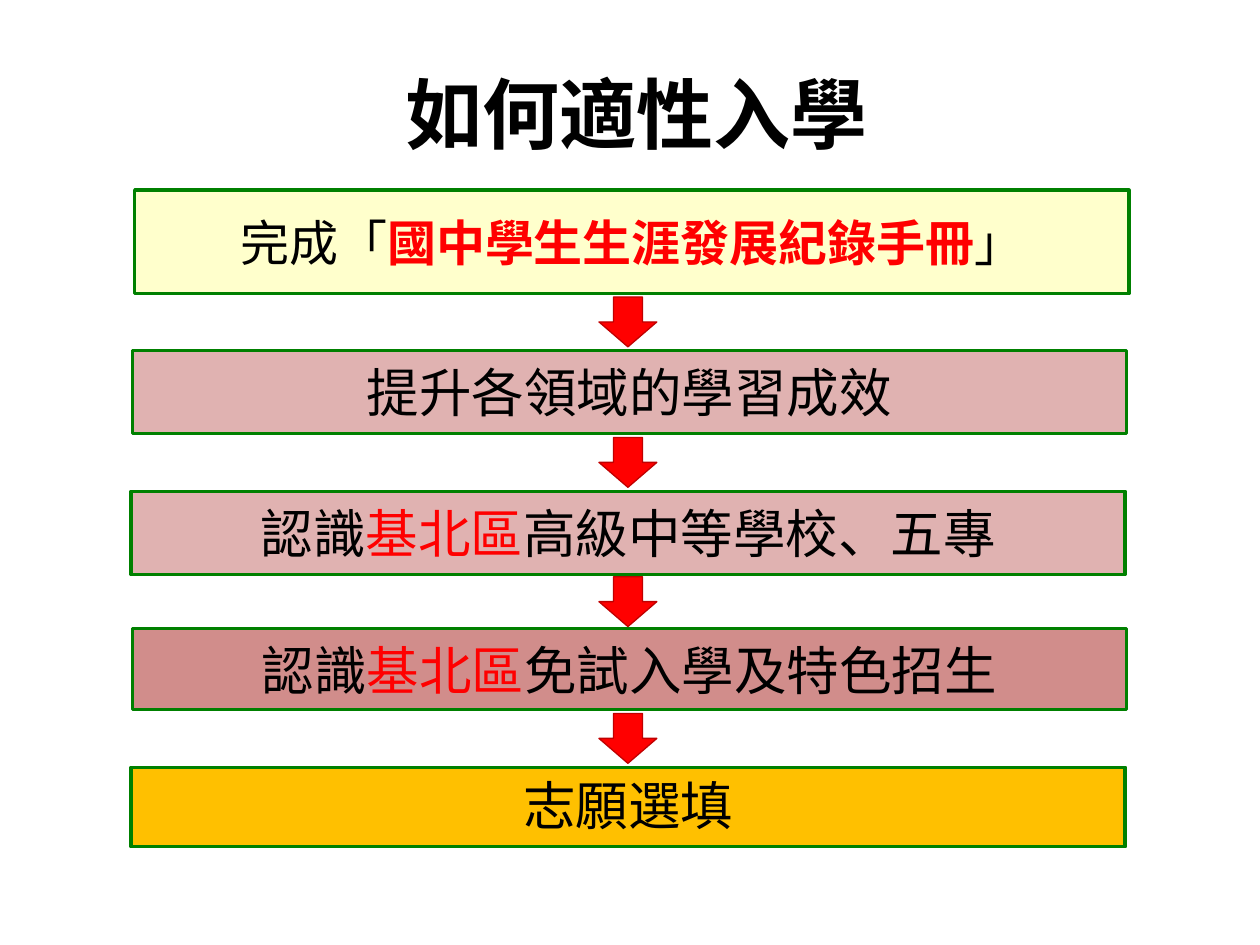
from pptx import Presentation
from pptx.dml.color import RGBColor
from pptx.enum import shapes, text
from pptx.util import Pt

THEME = {
    "ink": "000000", "red": "FF0000", "edge": "008000", "rim": "C00000",
    "cream": "FFFFCC", "pink": "E0B2B1", "rose": "D18D8B", "gold": "FFC000",
    "face": "Arial", "serif": "Times New Roman",
    "head": 44, "lead": 28, "body": 30,
}
TITLE = "如何適性入學"
MID, TOP = text.MSO_ANCHOR.MIDDLE, text.MSO_ANCHOR.TOP
STEPS = [
    {"at": (77, 108.7, 59), "fill": "cream", "size": "lead", "hang": 49.7, "anchor": MID,
     "runs": [("完成「", "ink", False), ("國中學生生涯發展紀錄手冊", "red", True), ("」", "ink", False)]},
    {"at": (75.6, 200.2, 47.5), "fill": "pink", "size": "body", "hang": 0, "anchor": MID,
     "runs": [("提升各領域的學習成效", "ink", False)]},
    {"at": (74.9, 280.8, 47.5), "fill": "pink", "size": "body", "hang": 0, "anchor": MID,
     "runs": [("認識", "ink", False), ("基北區", "red", False), ("高級中等學校、五專", "ink", False)]},
    {"at": (75.6, 359.3, 46.1), "fill": "rose", "size": "body", "hang": 0, "anchor": MID,
     "runs": [("認識", "ink", False), ("基北區", "red", False), ("免試入學及特色招生", "ink", False)]},
    {"at": (74.9, 438.5, 45.4), "fill": "gold", "size": "body", "hang": 0, "anchor": TOP,
     "runs": [("志願選填", "ink", False)]},
]
WIDE = 568.1
AXIS = 358.8
ARROW = (28.5, 33.1)


def tint(name):
    return RGBColor.from_string(THEME[name])


def shade(shape, fill, edge, width):
    shape.shadow.inherit = False
    shape.fill.solid()
    shape.fill.fore_color.rgb = tint(fill)
    shape.line.color.rgb = tint(edge)
    shape.line.width = Pt(width)


def write(frame, runs, size, face, left=0, first=0):
    para = frame.paragraphs[0]
    para.alignment = text.PP_ALIGN.CENTER
    props = para._p.get_or_add_pPr()
    for key, val in {"marL": left, "indent": first}.items():
        props.set(key, str(int(Pt(val))))
    for words, hue, bold in runs:
        run = para.add_run()
        run.text = words
        style = {"size": Pt(THEME[size]), "name": THEME[face], "bold": bold}
        for key, val in style.items():
            setattr(run.font, key, val)
        run.font.color.rgb = tint(hue)


def add_step(slide, step):
    left, top, high = step["at"]
    box = slide.shapes.add_shape(
        shapes.MSO_SHAPE.RECTANGLE, Pt(left), Pt(top), Pt(WIDE), Pt(high))
    shade(box, step["fill"], "edge", 2)
    frame = box.text_frame
    frame.word_wrap = True
    frame.vertical_anchor = step["anchor"]
    write(frame, step["runs"], step["size"], "face", step["hang"], -step["hang"])


def add_arrow(slide, above, below):
    end = above["at"][1] + above["at"][2]
    mid = (end + below["at"][1]) / 2
    wide, high = ARROW
    arrow = slide.shapes.add_shape(
        shapes.MSO_SHAPE.RIGHT_ARROW, Pt(AXIS - wide / 2), Pt(mid - high / 2),
        Pt(wide), Pt(high))
    arrow.rotation = 90
    shade(arrow, "red", "rim", 0.75)


def main():
    deck = Presentation()
    deck.slide_width, deck.slide_height = Pt(720), Pt(540)
    slide = deck.slides.add_slide(deck.slide_layouts[6])
    for step in STEPS:
        add_step(slide, step)
    for above, below in zip(STEPS, STEPS[1:]):
        add_arrow(slide, above, below)
    title = slide.shapes.add_textbox(Pt(35.3), Pt(34.6), Pt(646.6), Pt(60.5)).text_frame
    title.word_wrap = True
    title.auto_size = text.MSO_AUTO_SIZE.SHAPE_TO_FIT_TEXT
    write(title, [(TITLE, "ink", True)], "head", "serif", first=10)
    deck.save("out.pptx")


if __name__ == "__main__":
    main()
